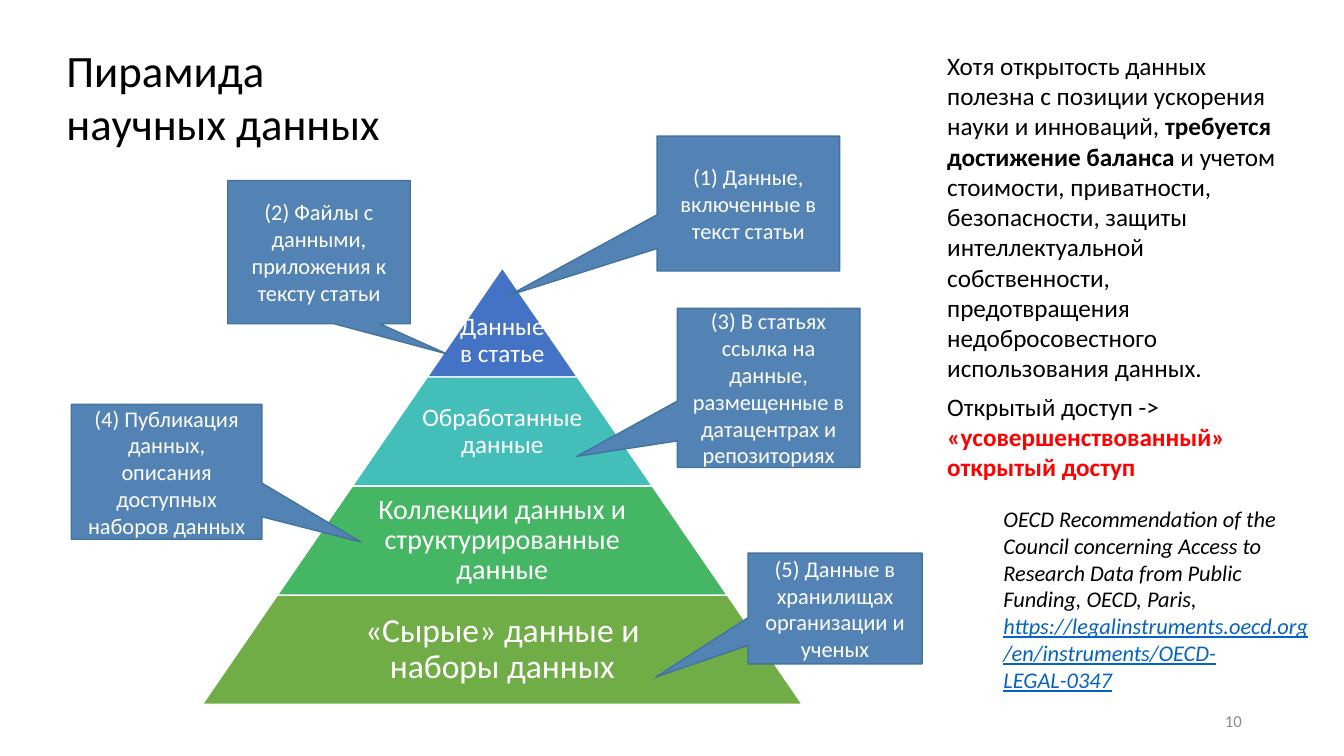
"""Build the slide about the pyramid of research data."""
from dataclasses import dataclass

from pptx import Presentation
from pptx.dml.color import RGBColor
from pptx.enum.shapes import MSO_SHAPE
from pptx.enum.text import MSO_ANCHOR, PP_ALIGN
from pptx.shapes.autoshape import Shape
from pptx.slide import Slide
from pptx.util import Cm, Pt

TRAPEZOID = MSO_SHAPE.TRAPEZOID
CALLOUT = MSO_SHAPE.RECTANGULAR_CALLOUT
TOP, MIDDLE = MSO_ANCHOR.TOP, MSO_ANCHOR.MIDDLE
LEFT, CENTER, RIGHT = PP_ALIGN.LEFT, PP_ALIGN.CENTER, PP_ALIGN.RIGHT


@dataclass(frozen=True)
class Theme:
    """Colours and type sizes of the slide."""
    font: str = "Calibri"
    text: str = "000000"
    light: str = "FFFFFF"
    accent: str = "FF0000"
    address: str = "0563C1"
    muted: str = "8C8C8C"
    callout_fill: str = "5382B5"
    callout_line: str = "43739E"
    title_size: int = 32
    body_size: int = 18
    note_size: int = 16
    number_size: int = 12


THEME = Theme()


@dataclass(frozen=True)
class Span:
    """A run of text with one look."""
    text: str
    size: int
    color: str = THEME.text
    bold: bool = False
    italic: bool = False
    underline: bool = False


@dataclass(frozen=True)
class Area:
    """A rectangle in centimetres."""
    left: float
    top: float
    width: float
    height: float


@dataclass(frozen=True)
class Tier:
    """One level of the pyramid."""
    lines: tuple[str, ...]
    fill: str
    size: int
    label_share: float = 0.65
    label_drop: float = 0


@dataclass(frozen=True)
class Callout:
    """A note whose tip points into the pyramid."""
    text: str
    area: Area
    tip: tuple[float, float]


PYRAMID_CENTER, PYRAMID_TOP = 12.66, 6.75
TIER_HEIGHT, TIER_STEP = 2.75, 1.89
TIERS = (
    Tier(("Данные", "в статье"), "4472C4", 18, 1, 0.46),
    Tier(("Обработанные данные",), "43BEB9", 18),
    Tier(("Коллекции данных и структурированные данные",), "45B664", 20),
    Tier(("«Сырые» данные и наборы данных",), "70AD47", 24),
)
CALLOUTS = (
    Callout("(1) Данные, включенные в текст статьи",
            Area(16.56, 3.43, 4.6, 3.4), (-1.31, 0.68)),
    Callout("(2) Файлы с данными, приложения к тексту статьи",
            Area(5.74, 4.55, 4.6, 3.61), (0.7, 0.71)),
    Callout("(3) В статьях ссылка на данные, размещенные в датацентрах и репозиториях",
            Area(17.07, 7.77, 4.6, 4.01), (-1.05, 0.43)),
    Callout("(4) Публикация данных, описания доступных наборов данных",
            Area(1.8, 10.19, 4.8, 3.4), (1.02, 0.52)),
    Callout("(5) Данные в хранилищах организации и ученых",
            Area(18.85, 13.94, 4.39, 2.79), (-1.03, 0.62)),
)
TITLE = [[Span(line, THEME.title_size)] for line in ("Пирамида", "научных данных")]
BODY = [
    [Span("Хотя открытость данных полезна с позиции ускорения науки и инноваций, ",
          THEME.body_size),
     Span("требуется достижение баланса ", THEME.body_size, bold=True),
     Span("и учетом стоимости, приватности, безопасности, защиты интеллектуальной "
          "собственности, предотвращения недобросовестного использования данных.",
          THEME.body_size)],
    [Span("Открытый доступ -> ", THEME.body_size),
     Span("«усовершенствованный» открытый доступ", THEME.body_size, THEME.accent, bold=True)],
]
REFERENCE = [[
    Span("OECD Recommendation of the Council concerning Access to Research Data "
         "from Public Funding, OECD, Paris, ", THEME.note_size, italic=True),
    Span("https://legalinstruments.oecd.org/en/instruments/OECD-LEGAL-0347",
         THEME.note_size, THEME.address, italic=True, underline=True),
]]


def place(shape: Shape, area: Area) -> None:
    """Move and size a shape."""
    shape.left, shape.top = Cm(area.left), Cm(area.top)
    shape.width, shape.height = Cm(area.width), Cm(area.height)


def write(shape: Shape, paragraphs: list[list[Span]], align: PP_ALIGN = LEFT,
          anchor: MSO_ANCHOR = TOP, spacing: float = 1, gap: float = 0) -> None:
    """Fill a shape with paragraphs, run by run."""
    frame = shape.text_frame
    frame.word_wrap = True
    frame.vertical_anchor = anchor
    for index, spans in enumerate(paragraphs):
        para = frame.add_paragraph() if index else frame.paragraphs[0]
        para.alignment = align
        para.line_spacing = spacing
        para.space_before = Pt(gap if index else 0)
        for span in spans:
            run = para.add_run()
            run.text = span.text
            font = run.font
            font.name, font.size = THEME.font, Pt(span.size)
            font.bold, font.italic, font.underline = span.bold, span.italic, span.underline
            font.color.rgb = RGBColor.from_string(span.color)


def add_box(page: Slide, area: Area) -> Shape:
    """Add an empty text box."""
    box = page.shapes.add_textbox(0, 0, 0, 0)
    place(box, area)
    return box


def add_figure(page: Slide, kind: MSO_SHAPE, area: Area, fill: str, line: str,
               adjustments: tuple[float, ...]) -> Shape:
    """Add a filled preset shape with a thin outline."""
    figure = page.shapes.add_shape(kind, 0, 0, 0, 0)
    place(figure, area)
    figure.shadow.inherit = False
    figure.fill.solid()
    figure.fill.fore_color.rgb = RGBColor.from_string(fill)
    figure.line.color.rgb = RGBColor.from_string(line)
    figure.line.width = Pt(1)
    for index, value in enumerate(adjustments):
        figure.adjustments[index] = value
    return figure


def add_tier(page: Slide, level: int, tier: Tier) -> None:
    """Draw one pyramid level and its label."""
    half = TIER_STEP * (level + 1)
    top = PYRAMID_TOP + TIER_HEIGHT * level
    area = Area(PYRAMID_CENTER - half, top, 2 * half, TIER_HEIGHT)
    add_figure(page, TRAPEZOID, area, tier.fill, THEME.light, (TIER_STEP / TIER_HEIGHT,))
    reach = half * tier.label_share
    label = add_box(page, Area(PYRAMID_CENTER - reach, top + tier.label_drop,
                               2 * reach, TIER_HEIGHT))
    frame = label.text_frame
    frame.margin_left = frame.margin_right = frame.margin_top = frame.margin_bottom = Cm(0.08)
    lines = [[Span(line, tier.size, THEME.light)] for line in tier.lines]
    write(label, lines, CENTER, MIDDLE, spacing=0.9)


def add_callout(page: Slide, callout: Callout) -> None:
    """Draw one callout with its text."""
    figure = add_figure(page, CALLOUT, callout.area, THEME.callout_fill,
                        THEME.callout_line, callout.tip)
    write(figure, [[Span(callout.text, THEME.note_size, THEME.light)]], CENTER, MIDDLE)


def main() -> None:
    """Build and save the deck."""
    deck = Presentation()
    deck.slide_width, deck.slide_height = Cm(33.87), Cm(19.05)
    page = deck.slides.add_slide(deck.slide_layouts[5])
    for level, tier in enumerate(TIERS):
        add_tier(page, level, tier)
    for callout in CALLOUTS:
        add_callout(page, callout)
    place(page.shapes.title, Area(1.42, 0.94, 8.81, 3))
    write(page.shapes.title, TITLE)
    write(add_box(page, Area(23.62, 1.14, 8.86, 11.25)), BODY, gap=6)
    write(add_box(page, Area(25.04, 12.6, 8.33, 5.05)), REFERENCE)
    write(add_box(page, Area(23.93, 17.65, 7.62, 1.02)),
          [[Span("10", THEME.number_size, THEME.muted)]], RIGHT, MIDDLE)
    deck.save("out.pptx")


if __name__ == "__main__":
    main()
